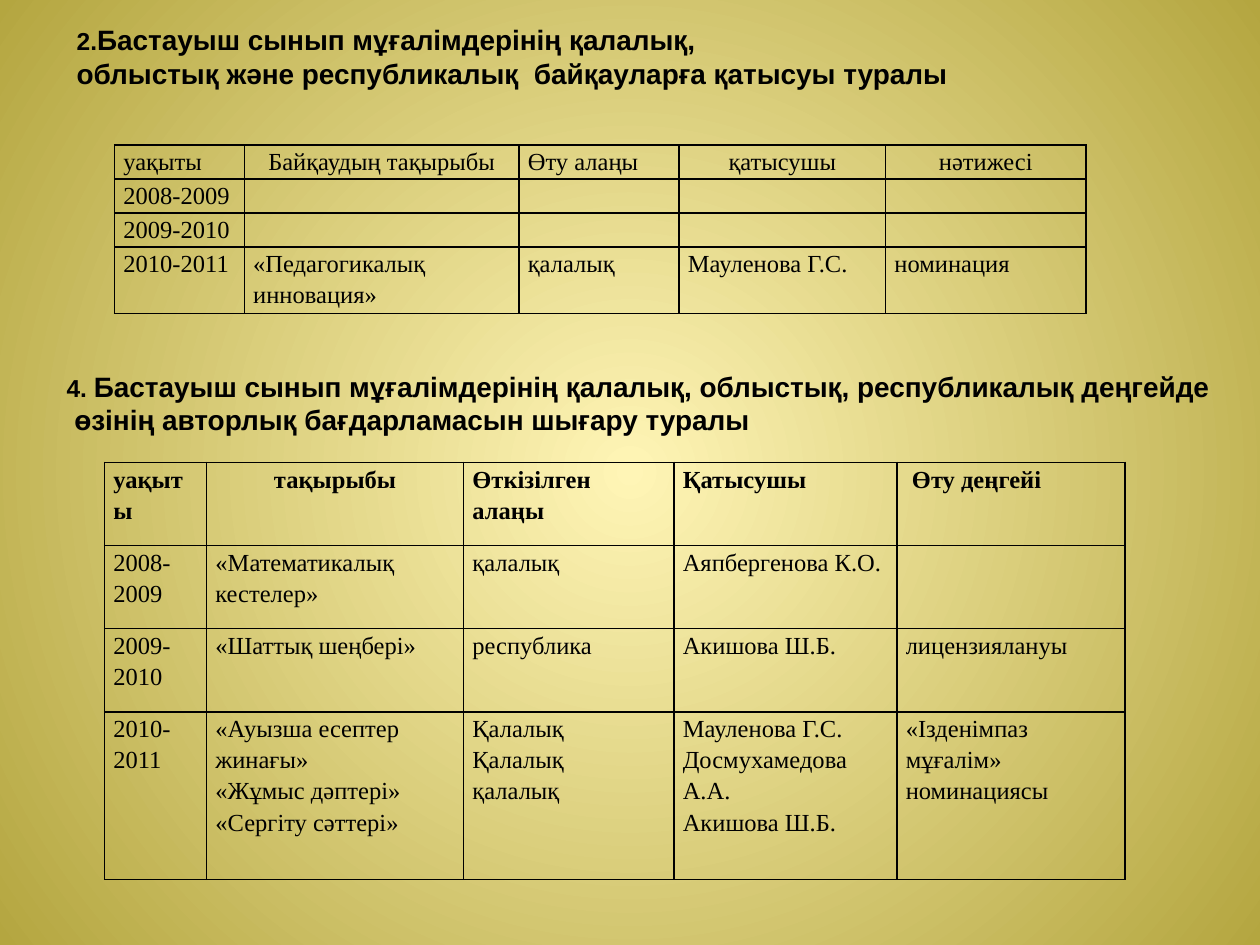
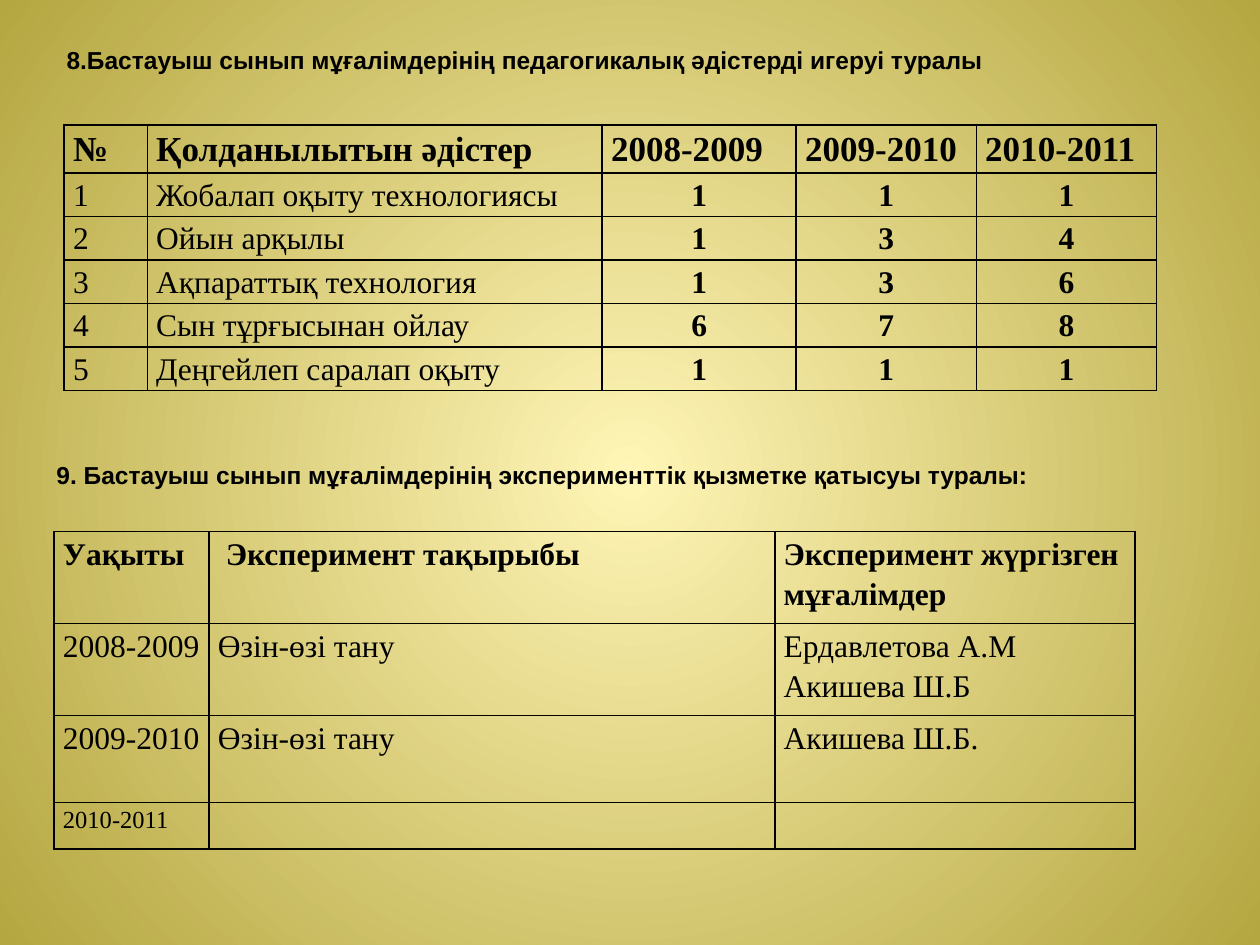
import pptx
import pptx.dml.color
import pptx.enum.text
import pptx.oxml.ns
import pptx.util
from lxml import etree

Inches, Pt = pptx.util.Inches, pptx.util.Pt
RGBColor = pptx.dml.color.RGBColor
qn = pptx.oxml.ns.qn
CENTER = pptx.enum.text.PP_ALIGN.CENTER

BLACK = RGBColor(0x00, 0x00, 0x00)
GLOW = RGBColor(0xFF, 0xF5, 0xB6)
OLIVE = RGBColor(0xB4, 0xA6, 0x40)
HEADING_FONT, TABLE_FONT = "Arial", "Times New Roman"

# Headings: box is (left, top, width, height); each line is a list of (text, size)
# Tables: "centered", "bold" and "sizes" are keyed by (row, column)
SLIDES = [
    {
        "headings": [
            {"box": (0.51, 0.13, 7.19, 0.61),
             "lines": [[("2.", 14), ("Бастауыш сынып мұғалімдерінің қалалық,", 16)],
                       [("облыстық және республикалық  байқауларға қатысуы туралы", 16)]]},
            {"box": (0.43, 2.88, 9.38, 0.61),
             "lines": [[("4. ", 14),
                        ("Бастауыш сынып мұғалімдерінің қалалық, облыстық, республикалық деңгейде", 16)],
                       [(" өзінің авторлық бағдарламасын шығару туралы", 16)]]},
        ],
        "tables": [
            {"corner": (0.91, 1.15), "size": 14,
             "columns": [1.03, 2.18, 1.27, 1.64, 1.59],
             "heights": [0.27, 0.27, 0.27, 0.53],
             "centered": {(0, 1), (0, 3), (0, 4)},
             "rows": [
                 ["уақыты", "Байқаудың тақырыбы", "Өту алаңы", "қатысушы", "нәтижесі"],
                 ["2008-2009", "", "", "", ""],
                 ["2009-2010", "", "", "", ""],
                 ["2010-2011", "«Педагогикалық инновация»", "қалалық", "Мауленова Г.С.", "номинация"],
             ]},
            {"corner": (0.83, 3.67), "size": 14,
             "columns": [0.81, 2.04, 1.67, 1.77, 1.81],
             "heights": [0.66, 0.66, 0.66, 1.33],
             "centered": {(0, 1)},
             "bold": {(0, column) for column in range(5)},
             "rows": [
                 ["уақыты", "тақырыбы", "Өткізілген алаңы", "Қатысушы", " Өту деңгейі"],
                 ["2008-2009", "«Математикалық кестелер»", "қалалық", "Аяпбергенова К.О.", ""],
                 ["2009-2010", "«Шаттық шеңбері»", "республика", "Акишова Ш.Б.", "лицензиялануы"],
                 ["2010-2011",
                  "«Ауызша есептер жинағы»\n«Жұмыс дәптері»\n«Сергіту сәттері»",
                  "Қалалық\nҚалалық\nқалалық",
                  "Мауленова Г.С.\nДосмухамедова А.А.\nАкишова Ш.Б.",
                  "«Ізденімпаз мұғалім» номинациясы"],
             ]},
        ],
    },
    {
        "headings": [
            {"box": (0.43, 0.31, 10, 0.32),
             "lines": [[("8.Бастауыш сынып мұғалімдерінің педагогикалық әдістерді игеруі туралы", 14)]]},
            {"box": (0.35, 3.6, 10, 0.32),
             "lines": [[("9. Бастауыш сынып мұғалімдерінің эксперименттік қызметке қатысуы туралы:", 14)]]},
        ],
        "tables": [
            {"corner": (0.51, 0.99), "size": 18,
             "columns": [0.66, 3.61, 1.54, 1.43, 1.43],
             "heights": [0.38] + [0.34] * 5,
             "centered": {(row, column) for row in range(1, 6) for column in range(2, 5)},
             "bold": {(row, column) for row in range(6) for column in range(5)
                      if row == 0 or column >= 2},
             "sizes": {(0, column): 20 for column in range(5)},
             "rows": [
                 ["№", "Қолданылытын әдістер", "2008-2009", "2009-2010", "2010-2011"],
                 ["1", "Жобалап оқыту технологиясы", "1", "1", "1"],
                 ["2", "Ойын арқылы", "1", "3", "4"],
                 ["3", "Ақпараттық технология", "1", "3", "6"],
                 ["4", "Сын тұрғысынан ойлау", "6", "7", "8"],
                 ["5", "Деңгейлеп саралап оқыту", "1", "1", "1"],
             ]},
            {"corner": (0.43, 4.22), "size": 18,
             "columns": [1.23, 4.49, 2.86],
             "heights": [0.73, 0.73, 0.69, 0.37],
             "bold": {(0, column) for column in range(3)},
             "sizes": {(3, 0): 14},
             "rows": [
                 ["Уақыты", " Эксперимент тақырыбы", "Эксперимент жүргізген мұғалімдер"],
                 ["2008-2009", "Өзін-өзі тану", "Ердавлетова А.М\nАкишева Ш.Б"],
                 ["2009-2010", "Өзін-өзі тану", "Акишева Ш.Б."],
                 ["2010-2011", "", ""],
             ]},
        ],
    },
]


def style_run(run, font_name, size, bold):
    run.font.name = font_name
    run.font.size = Pt(size)
    run.font.bold = bold
    run.font.color.rgb = BLACK


def paint_background(slide):
    """Radial gradient glowing from the middle of the slide."""
    fill = slide.background.fill
    fill.gradient()
    for stop, color, position in zip(fill.gradient_stops, (GLOW, OLIVE), (0, 1)):
        stop.color.rgb = color
        stop.position = position
    gradient = slide.element.find(".//" + qn("a:gradFill"))
    linear = gradient.find(qn("a:lin"))
    if linear is not None:
        gradient.remove(linear)
    radial = etree.SubElement(gradient, qn("a:path"))
    radial.set("path", "circle")
    center = etree.SubElement(radial, qn("a:fillToRect"))
    for side in "ltrb":
        center.set(side, "50000")


def add_heading(slide, heading):
    text_frame = slide.shapes.add_textbox(*map(Inches, heading["box"])).text_frame
    text_frame.word_wrap = False
    text_frame.auto_size = pptx.enum.text.MSO_AUTO_SIZE.SHAPE_TO_FIT_TEXT
    for index, line in enumerate(heading["lines"]):
        paragraph = text_frame.add_paragraph() if index else text_frame.paragraphs[0]
        for text, size in line:
            run = paragraph.add_run()
            run.text = text
            style_run(run, HEADING_FONT, size, True)


def add_borders(cell):
    properties = cell._tc.get_or_add_tcPr()
    for side in ("lnL", "lnR", "lnT", "lnB"):
        line = etree.SubElement(properties, qn("a:" + side), w=str(Pt(1)))
        solid = etree.SubElement(line, qn("a:solidFill"))
        etree.SubElement(solid, qn("a:srgbClr"), val=str(BLACK))


def fill_cell(cell, text, size, bold, centered):
    cell.margin_left = cell.margin_right = Inches(0.07)
    cell.margin_top = cell.margin_bottom = 0
    add_borders(cell)
    cell.fill.background()
    cell.text_frame.text = text
    for paragraph in cell.text_frame.paragraphs:
        paragraph.line_spacing = 1.15
        if centered:
            paragraph.alignment = CENTER
        for run in paragraph.runs:
            style_run(run, TABLE_FONT, size, bold)
        if not text:  # keeps an empty row from growing
            ending = etree.SubElement(paragraph._p, qn("a:endParaRPr"))
            ending.set("sz", str(size * 100))


def add_grid(slide, grid):
    columns, heights = grid["columns"], grid["heights"]
    left, top = grid["corner"]
    table = slide.shapes.add_table(
        len(heights), len(columns), Inches(left), Inches(top),
        Inches(sum(columns)), Inches(sum(heights))).table
    table.first_row = table.horz_banding = False
    for column, width in zip(table.columns, columns):
        column.width = Inches(width)
    for row, height in zip(table.rows, heights):
        row.height = Inches(height)
    for row_index, texts in enumerate(grid["rows"]):
        for column_index, text in enumerate(texts):
            place = (row_index, column_index)
            fill_cell(table.cell(*place), text,
                      grid.get("sizes", {}).get(place, grid["size"]),
                      place in grid.get("bold", ()),
                      place in grid.get("centered", ()))


def main():
    presentation = pptx.Presentation()
    presentation.slide_width, presentation.slide_height = Inches(10), Inches(7.5)
    for content in SLIDES:
        slide = presentation.slides.add_slide(presentation.slide_layouts[6])
        paint_background(slide)
        for grid, heading in zip(content["tables"], content["headings"]):
            add_grid(slide, grid)
            add_heading(slide, heading)
    presentation.save("out.pptx")


if __name__ == "__main__":
    main()
